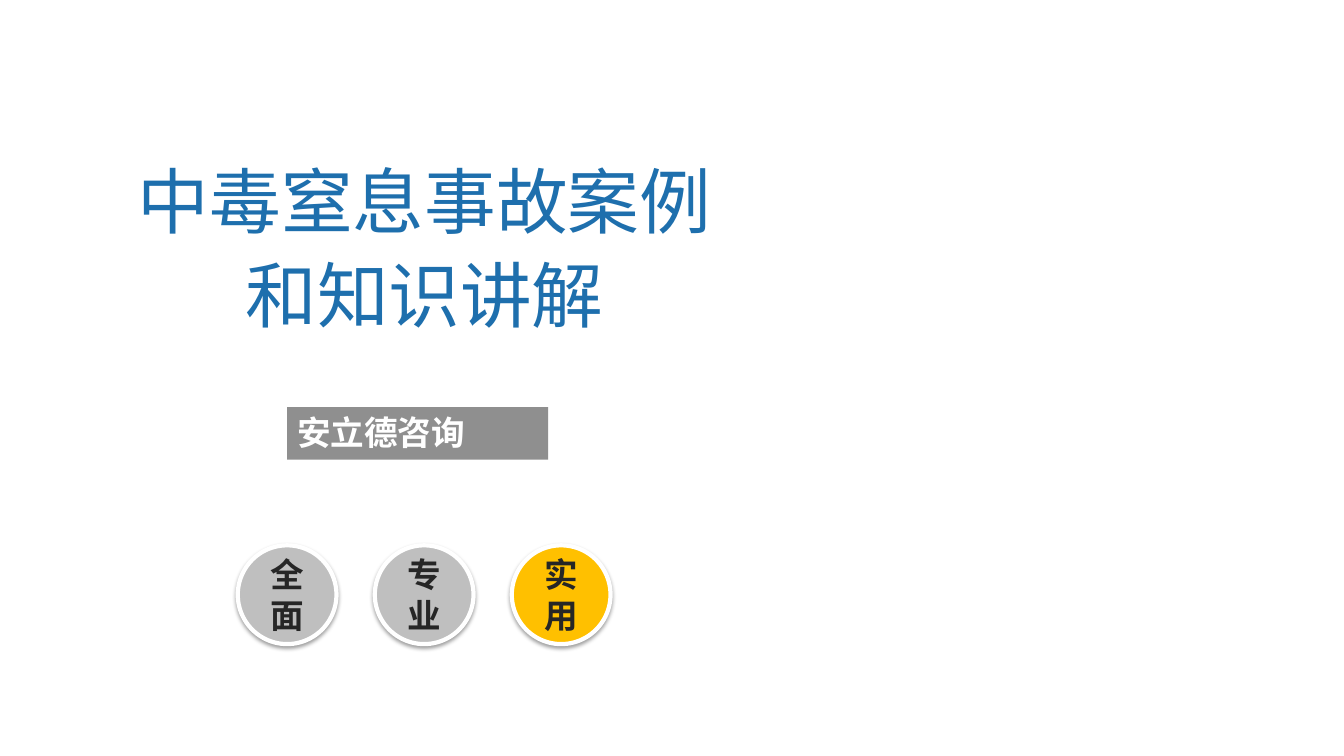
from lxml import etree
from pptx import Presentation
from pptx.dml.color import RGBColor
from pptx.enum.shapes import MSO_SHAPE
from pptx.enum.text import MSO_ANCHOR, PP_ALIGN
from pptx.oxml import parse_xml
from pptx.oxml.ns import nsdecls, qn
from pptx.util import Inches, Pt

CENTER, JUSTIFY = PP_ALIGN.CENTER, PP_ALIGN.JUSTIFY
TOP, MIDDLE = MSO_ANCHOR.TOP, MSO_ANCHOR.MIDDLE
RECTANGLE, OVAL = MSO_SHAPE.RECTANGLE, MSO_SHAPE.OVAL
CJK_FONT = "Noto Sans CJK SC"
COLORS = {"title": "1E6FAD", "banner": "8F8F8F", "gray": "BFBFBF",
          "gold": "FFC000", "white": "FFFFFF", "dark": "262626"}


def write_text(shape, text, size, color, font=CJK_FONT, bold=False,
               align=CENTER, anchor=MIDDLE, spacing=1.0):
    frame = shape.text_frame
    frame.word_wrap = True
    frame.vertical_anchor = anchor
    paragraph = frame.paragraphs[0]
    paragraph.alignment = align
    paragraph.line_spacing = spacing
    run = paragraph.add_run()
    run.text = text
    run.font.size = Pt(size)
    run.font.bold = bold
    run.font.name = font
    run.font.color.rgb = RGBColor.from_string(COLORS[color])
    east_asian = etree.SubElement(run.font._element, qn("a:ea"))
    east_asian.set("typeface", CJK_FONT)


def add_filled_shape(kind, left, top, width, height, fill):
    shape = slide.shapes.add_shape(
        kind, Inches(left), Inches(top), Inches(width), Inches(height))
    shape.shadow.inherit = False
    shape.fill.solid()
    shape.fill.fore_color.rgb = RGBColor.from_string(COLORS[fill])
    shape.line.fill.background()
    return shape


presentation = Presentation()
presentation.slide_width = Inches(13.34)
presentation.slide_height = Inches(7.5)
slide = presentation.slides.add_slide(presentation.slide_layouts[6])

title = slide.shapes.add_textbox(
    Inches(0.93), Inches(1.42), Inches(6.57), Inches(1.92))
write_text(title, "中毒窒息事故案例和知识讲解", 51.2, "title",
           anchor=TOP, spacing=1.1)

banner = add_filled_shape(RECTANGLE, 2.85, 4.04, 2.59, 0.52, "banner")
write_text(banner, "安立德咨询", 24, "white", bold=True, align=JUSTIFY, anchor=TOP)

badges = [("全面", "gray"), ("专业", "gray"), ("实用", "gold")]
for index, (label, fill) in enumerate(badges):
    badge = add_filled_shape(OVAL, 2.36 + 1.36 * index, 5.41, 0.98, 0.98, fill)
    badge.line.color.rgb = RGBColor.from_string(COLORS["white"])
    badge.line.width = Pt(3)
    effects = badge._element.spPr.find(qn("a:effectLst"))
    effects.append(parse_xml(
        f'<a:outerShdw {nsdecls("a")} blurRad="{Pt(3.1)}" dist="{Pt(1.6)}" '
        'dir="5400000" rotWithShape="0"><a:srgbClr val="000000">'
        '<a:alpha val="38000"/></a:srgbClr></a:outerShdw>'))
    write_text(badge, label, 24, "dark", font="Calibri", bold=True)

presentation.save("out.pptx")
